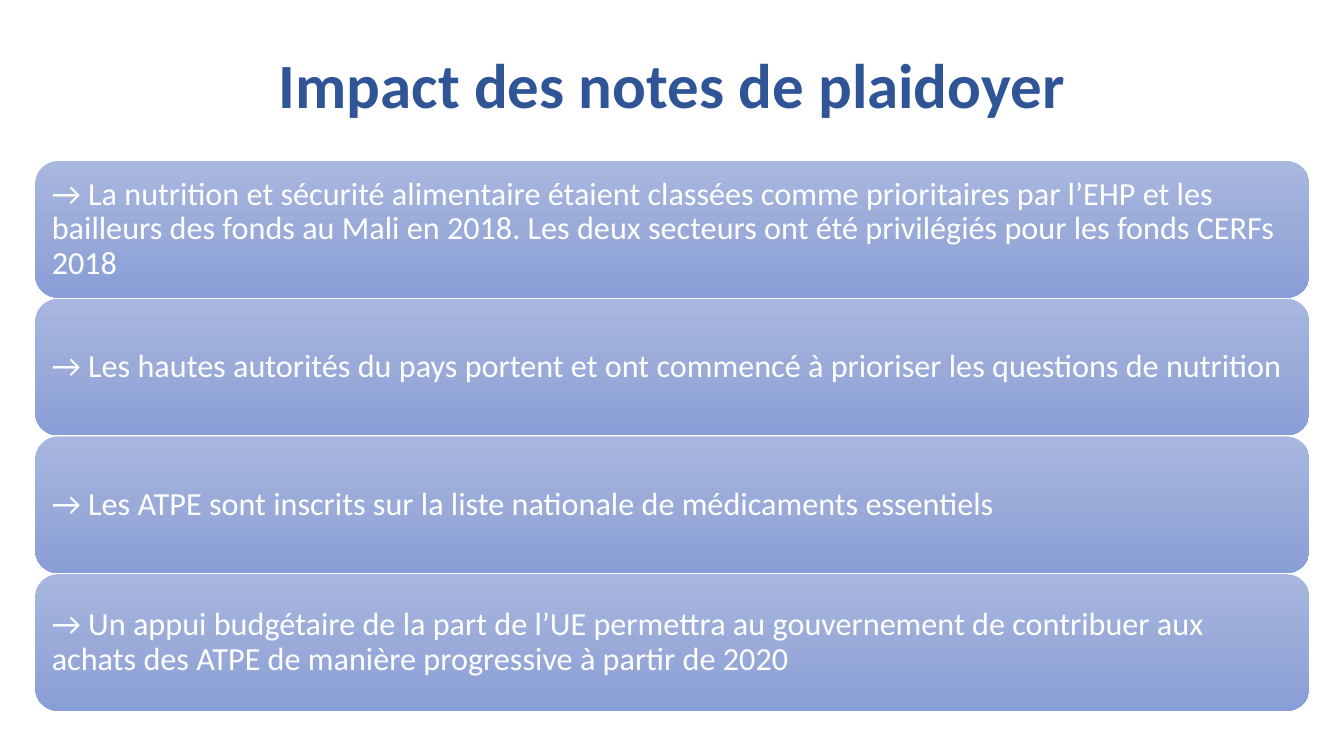
from copy import deepcopy

from pptx import Presentation
from pptx.dml.color import RGBColor
from pptx.enum import shapes, text
from pptx.oxml.ns import qn
from pptx.util import Cm, Pt

TITLE = "Impact des notes de plaidoyer"
IMPACTS = [
    "→ La nutrition et sécurité alimentaire étaient classées comme prioritaires par l’EHP et les bailleurs des fonds au Mali en 2018. Les deux secteurs ont été privilégiés pour les fonds CERFs 2018",
    "→ Les hautes autorités du pays portent et ont commencé à prioriser les questions de nutrition",
    "→ Les ATPE sont inscrits sur la liste nationale de médicaments essentiels",
    "→ Un appui budgétaire de la part de l’UE permettra au gouvernement de contribuer aux achats des ATPE de manière progressive à partir de 2020",
]
GRADIENT = [(0, "A8B7DF"), (0.5, "9AABD9"), (1, "889ED7")]
BAR_TOP, BAR_HEIGHT, BAR_PITCH = 4.06, 3.44, 3.47
MARGINS = ("margin_left", "margin_top", "margin_right", "margin_bottom")


def color(value):
    return RGBColor.from_string(value)


def apply_format(target, values):
    for name, value in values.items():
        setattr(target, name, value)


def write_text(shape, content, alignment, font_color, font_format):
    frame = shape.text_frame
    apply_format(frame, {"word_wrap": True, "vertical_anchor": text.MSO_ANCHOR.MIDDLE})
    paragraph = frame.paragraphs[0]
    apply_format(paragraph, {"alignment": alignment, "line_spacing": 0.9})
    run = paragraph.add_run()
    run.text = content
    apply_format(run.font, {"name": "Calibri", **font_format})
    run.font.color.rgb = color(font_color)


def fill_gradient(shape):
    shape.fill.gradient()
    shape.fill.gradient_angle = 270
    stop_list = shape.element.spPr.find(".//" + qn("a:gsLst"))
    stop_list.insert(1, deepcopy(stop_list[0]))
    for stop, (position, value) in zip(shape.fill.gradient_stops, GRADIENT):
        stop.position = position
        stop.color.rgb = color(value)


def add_title(slide):
    title = slide.shapes.add_textbox(Cm(2.33), Cm(0.38), Cm(29.21), Cm(3.68))
    write_text(title, TITLE, text.PP_ALIGN.CENTER, "2F5597", {"size": Pt(45), "bold": True})


def add_impact_bar(slide, top, content):
    bar = slide.shapes.add_shape(
        shapes.MSO_SHAPE.ROUNDED_RECTANGLE, Cm(0.89), Cm(top), Cm(32.11), Cm(BAR_HEIGHT)
    )
    bar.shadow.inherit = False
    bar.line.fill.background()
    fill_gradient(bar)
    apply_format(bar.text_frame, dict.fromkeys(MARGINS, Cm(0.25)))
    write_text(bar, content, text.PP_ALIGN.LEFT, "FFFFFF", {"size": Pt(23)})


def main():
    presentation = Presentation()
    apply_format(presentation, {"slide_width": Cm(33.87), "slide_height": Cm(19.05)})
    slide = presentation.slides.add_slide(presentation.slide_layouts[6])
    add_title(slide)
    for index, content in enumerate(IMPACTS):
        add_impact_bar(slide, BAR_TOP + index * BAR_PITCH, content)
    presentation.save("out.pptx")


if __name__ == "__main__":
    main()
